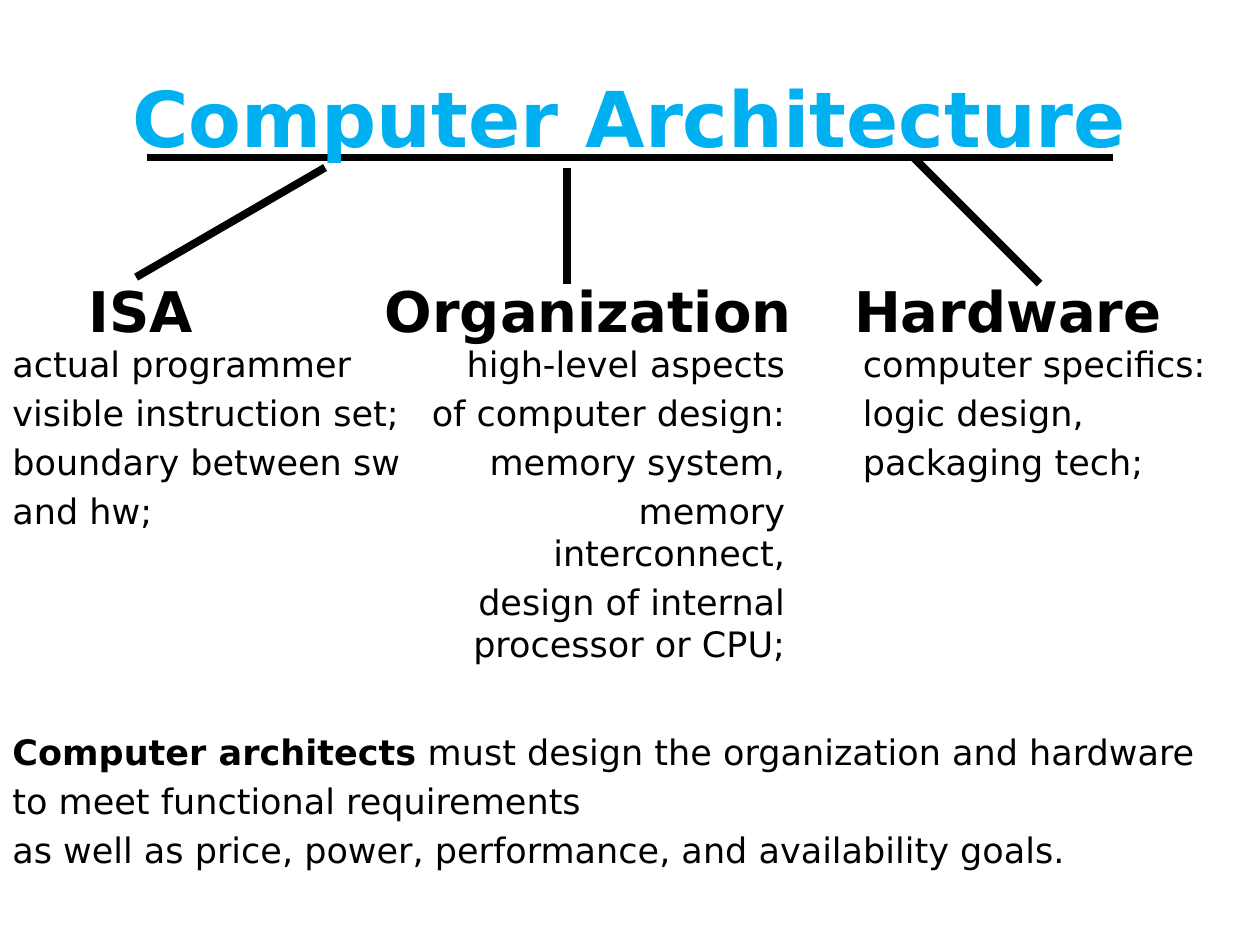
from pptx import Presentation
from pptx.dml.color import RGBColor
from pptx.enum.shapes import MSO_CONNECTOR
from pptx.enum.text import MSO_ANCHOR, PP_ALIGN
from pptx.oxml.ns import qn
from pptx.util import Inches, Pt
from lxml import etree

BLACK = RGBColor(0x00, 0x00, 0x00)
SKY_BLUE = RGBColor(0x00, 0xB0, 0xF0)
FONT = "DejaVu Sans"


class SlideBuilder:
    """Holds the slide and the style shared by its elements."""

    heading = {"size": Pt(32), "bold": True}
    title = {"size": Pt(44), "bold": True}
    body = {"size": Pt(20), "bold": False}
    hanging = 0.38
    line_width = Pt(4.5)

    def __init__(self, page):
        self.page = page

    def add_span(self, para, text, style, color=BLACK):
        span = para.add_run()
        span.text = text
        span.font.color.rgb = color
        for name, value in {"name": FONT, **style}.items():
            setattr(span.font, name, value)

    def add_frame(self, place, anchor):
        box = self.page.shapes.add_textbox(*map(Inches, place))
        frame = box.text_frame
        frame.word_wrap = True
        frame.vertical_anchor = anchor
        return frame

    def add_heading(self, text, place, style=heading, color=BLACK, indent=0):
        frame = self.add_frame(place, MSO_ANCHOR.MIDDLE)
        para = frame.paragraphs[0]
        para.alignment = PP_ALIGN.CENTER
        frame.margin_left = Inches(0.1 + indent)
        self.add_span(para, text, style, color)

    def add_body(self, lines, place, align=PP_ALIGN.LEFT, lead=None):
        frame = self.add_frame(place, MSO_ANCHOR.TOP)
        for number, line in enumerate(lines):
            para = frame.add_paragraph() if number else frame.paragraphs[0]
            para.alignment = align
            para.space_before = Pt(4 if number else 0)
            # Hanging indent
            properties = para._p.get_or_add_pPr()
            properties.set("marL", str(Inches(self.hanging)))
            properties.set("indent", str(-Inches(self.hanging)))
            if lead and number == 0:
                self.add_span(para, lead, {**self.body, "bold": True})
            self.add_span(para, line, self.body)

    def add_line(self, start, end):
        line = self.page.shapes.add_connector(
            MSO_CONNECTOR.STRAIGHT, *map(Inches, (*start, *end)))
        line.line.color.rgb = BLACK
        line.line.width = self.line_width
        etree.SubElement(line._element.spPr, qn("a:effectLst"))


def main():
    deck = Presentation()
    deck.slide_width, deck.slide_height = Inches(10), Inches(7.5)
    builder = SlideBuilder(deck.slides.add_slide(deck.slide_layouts[6]))

    # Title rule and the three branches
    for start, end in [
        ((1.17, 1.25), (8.83, 1.25)),
        ((4.5, 1.33), (4.5, 2.25)),
        ((2.58, 1.33), (1.08, 2.2)),
        ((7.25, 1.25), (8.25, 2.25)),
    ]:
        builder.add_line(start, end)

    # Branch headings
    for text, left, width, indent in [
        ("ISA", 0, 1.92, 0.31),
        ("Organization", 2.67, 4, 0),
        ("Hardware", 6.5, 3, 0),
    ]:
        builder.add_heading(text, (left, 2, width, 0.92), indent=indent)

    # Branch descriptions
    for left, width, align, lines in [
        (0, 3.5, PP_ALIGN.LEFT,
         ["actual programmer", "visible instruction set;",
          "boundary between sw", "and hw;"]),
        (3.08, 3.25, PP_ALIGN.RIGHT,
         ["high-level aspects", "of computer design:", "memory system,",
          "memory interconnect,", "design of internal processor or CPU;"]),
        (6.75, 3.25, PP_ALIGN.LEFT,
         ["computer specifics:", "logic design,", "packaging tech;"]),
    ]:
        builder.add_body(lines, (left, 2.67, width, 4.83), align)

    # Conclusion
    builder.add_body(
        [" must design the organization and hardware",
         "to meet functional requirements",
         "as well as price, power, performance, and availability goals."],
        (0, 5.75, 10, 1.75), lead="Computer architects")

    # Title, in front of its rule
    builder.add_heading("Computer Architecture", (0, 0.3, 10, 1.25),
                        builder.title, SKY_BLUE)

    deck.save("out.pptx")


if __name__ == "__main__":
    main()
